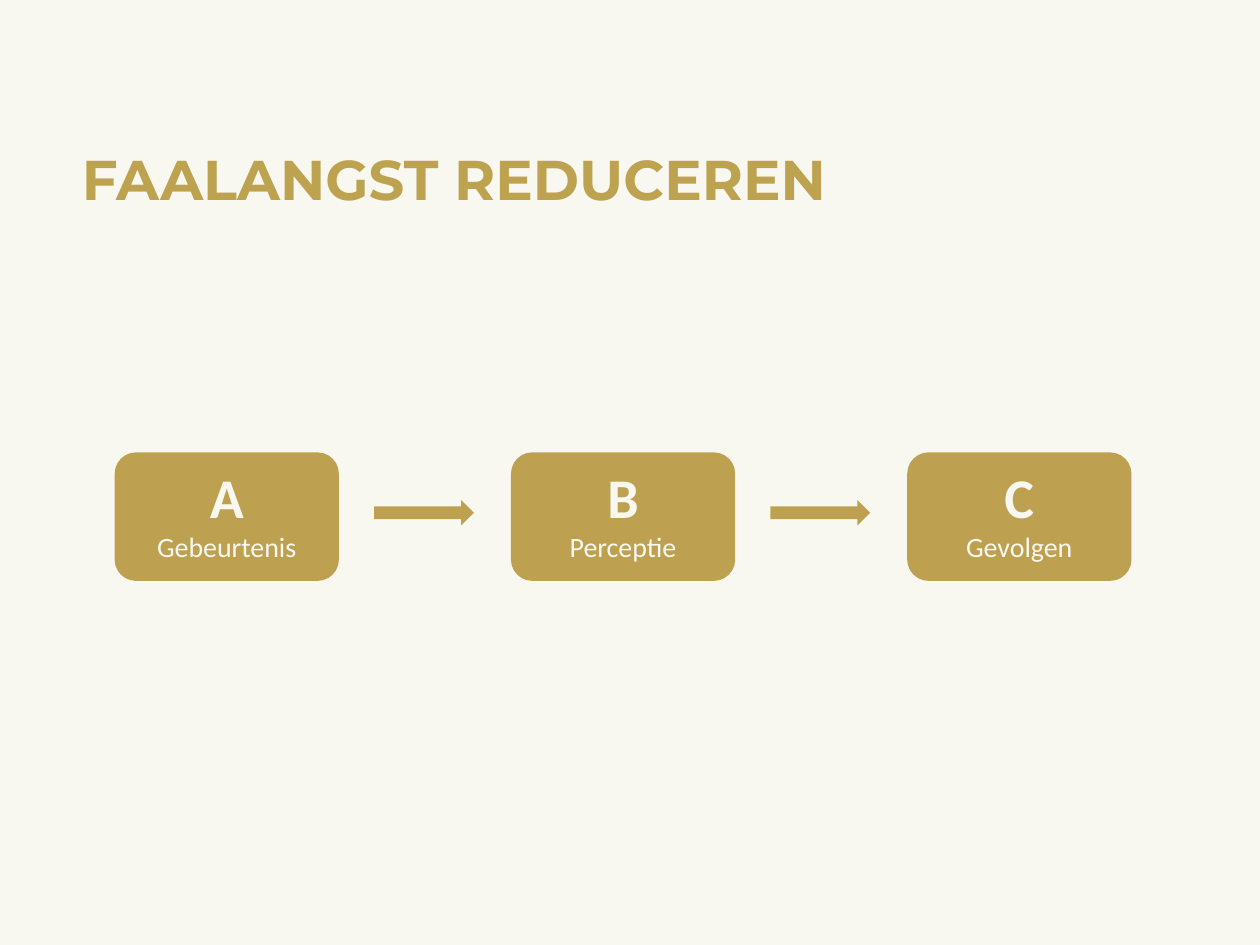
from dataclasses import dataclass

from pptx import Presentation
from pptx import util as u
from pptx.dml import color
from pptx.enum import shapes, text


@dataclass(frozen=True)
class Theme:
    paper: str = "F8F7F0"
    gold: str = "BDA150"
    title_gold: str = "BDA250"
    title_font: str = "Montserrat"
    body_font: str = "Calibri"
    large: int = 32
    small: int = 16


THEME = Theme()
STEPS = [("A", "Gebeurtenis"), ("B", "Perceptie"), ("C", "Gevolgen")]
STEP_LEFT, STEP_PITCH = 0.91, 3.145
ARROW_OFFSET = 2.06


def rgb(value):
    return color.RGBColor.from_string(value)


def write(para, words, *, size, tint, font, bold=False, align=text.PP_ALIGN.LEFT):
    para.alignment = align
    span = para.add_run()
    span.text = words
    span.font.size = u.Pt(size)
    span.font.name = font
    span.font.bold = bold
    span.font.color.rgb = rgb(tint)


def place(item, left, top, width, height):
    item.left, item.top = u.Inches(left), u.Inches(top)
    item.width, item.height = u.Inches(width), u.Inches(height)


def set_insets(frame, left, top, right, bottom):
    frame.margin_left, frame.margin_top = u.Inches(left), u.Inches(top)
    frame.margin_right, frame.margin_bottom = u.Inches(right), u.Inches(bottom)


def add_title(page, words):
    title = page.shapes.title
    place(title, 0.55, 0.58, 8.95, 1.15)
    frame = title.text_frame
    frame.word_wrap = True
    frame.vertical_anchor = text.MSO_ANCHOR.BOTTOM
    set_insets(frame, 0.1, 0.05, 0.1, 0.05)
    write(frame.paragraphs[0], words, size=THEME.large, tint=THEME.title_gold,
          font=THEME.title_font, bold=True)


def add_gold_shape(page, kind, left, top, width, height):
    shape = page.shapes.add_shape(kind, *map(u.Inches, (left, top, width, height)))
    shape.shadow.inherit = False
    shape.fill.solid()
    shape.fill.fore_color.rgb = rgb(THEME.gold)
    shape.line.fill.background()
    return shape


def add_step(page, left, letter, label):
    box = add_gold_shape(page, shapes.MSO_SHAPE.ROUNDED_RECTANGLE, left, 3.59, 1.78, 1.02)
    frame = box.text_frame
    frame.word_wrap = True
    frame.vertical_anchor = text.MSO_ANCHOR.MIDDLE
    set_insets(frame, 0.1, 0.04, 0.1, 0.1)
    style = dict(tint=THEME.paper, font=THEME.body_font, align=text.PP_ALIGN.CENTER)
    write(frame.paragraphs[0], letter, size=THEME.large, bold=True, **style)
    write(frame.add_paragraph(), label, size=THEME.small, **style)


def add_arrow(page, left):
    add_gold_shape(page, shapes.MSO_SHAPE.RIGHT_ARROW, left, 3.97, 0.79, 0.2)


def main():
    deck = Presentation()
    deck.slide_width, deck.slide_height = u.Inches(10), u.Inches(7.5)
    page = deck.slides.add_slide(deck.slide_layouts.get_by_name("Title Only"))
    page.background.fill.solid()
    page.background.fill.fore_color.rgb = rgb(THEME.paper)

    add_title(page, "FAALANGST REDUCEREN")
    lefts = [STEP_LEFT + index * STEP_PITCH for index in range(len(STEPS))]
    for left, (letter, label) in zip(lefts, STEPS):
        add_step(page, left, letter, label)
    for left in lefts[:-1]:
        add_arrow(page, left + ARROW_OFFSET)

    deck.save("out.pptx")


if __name__ == "__main__":
    main()
